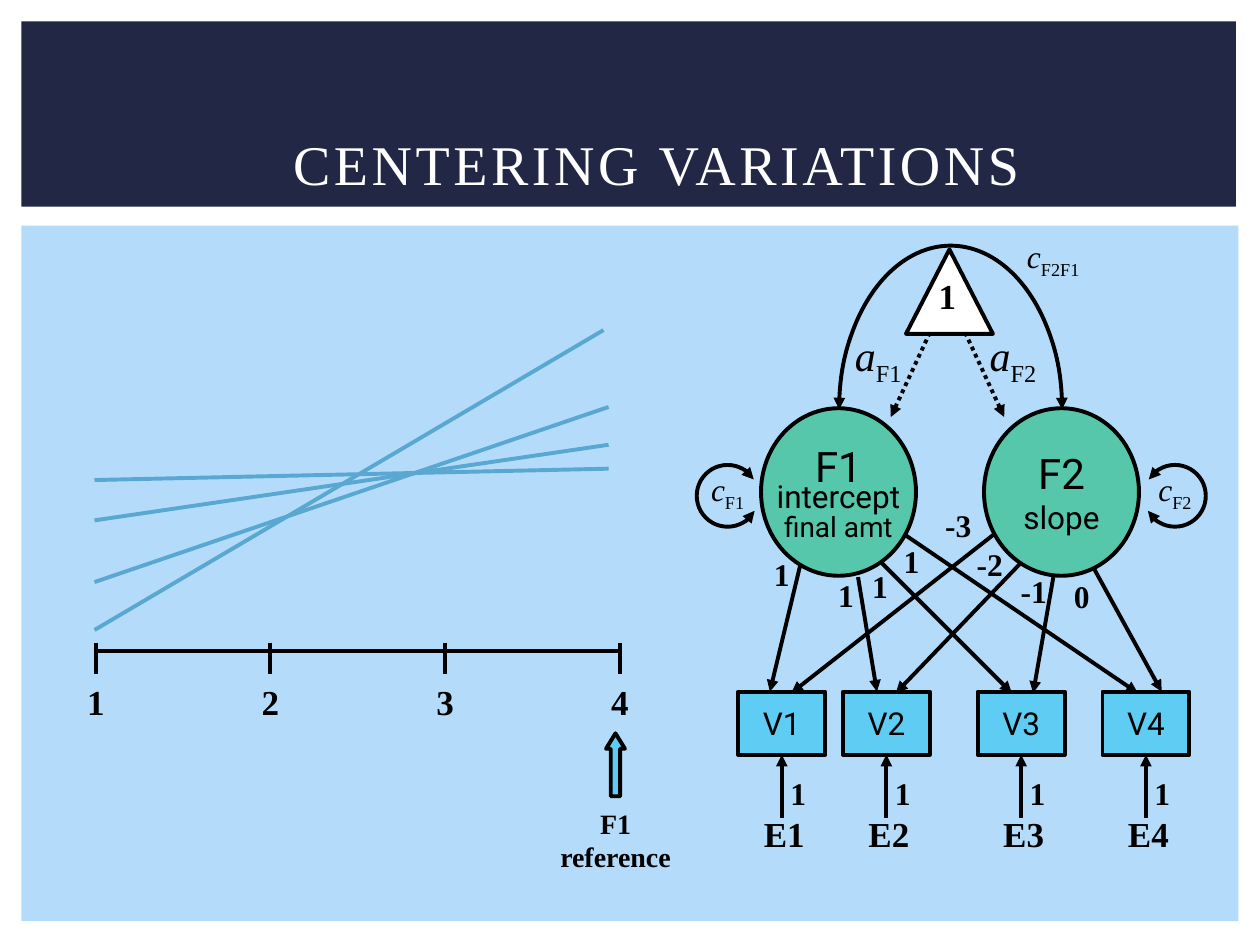
from lxml import etree
from pptx import Presentation
from pptx import util as u
from pptx.dml.color import RGBColor
from pptx.enum import dml, shapes, text
from pptx.oxml import ns

NAVY = RGBColor(0x21, 0x27, 0x45)
PALE = RGBColor(0xB4, 0xDC, 0xFA)
CYAN = RGBColor(0x5E, 0xCC, 0xF3)
GREEN = RGBColor(0x56, 0xC7, 0xAA)
STEEL = RGBColor(0x59, 0xA8, 0xD1)
BLACK = RGBColor(0, 0, 0)
WHITE = RGBColor(0xFF, 0xFF, 0xFF)
SERIF = "Times New Roman"
SANS = "Roboto"
STROKE = u.Pt(2.25)
Kind = shapes.MSO_SHAPE


def inches(*lengths):
    return [u.Inches(length) for length in lengths]


def add_run(paragraph, words, size, font=SERIF, color=BLACK, bold=False, italic=False):
    run = paragraph.add_run()
    run.text = words
    run.font.size = u.Pt(size)
    run.font.name = font
    run.font.color.rgb = color
    run.font.bold = bold
    run.font.italic = italic
    return run


def add_paragraph(frame, first, spacing=None):
    paragraph = frame.paragraphs[0] if first else frame.add_paragraph()
    paragraph.alignment = text.PP_ALIGN.CENTER
    if spacing:
        paragraph.line_spacing = spacing
    return paragraph


def add_label(slide, box, lines, size, subscript="", bold=True):
    frame = slide.shapes.add_textbox(*inches(*box)).text_frame
    frame.word_wrap = False
    frame.auto_size = text.MSO_AUTO_SIZE.SHAPE_TO_FIT_TEXT
    for index, line in enumerate(lines.split("\n")):
        paragraph = add_paragraph(frame, index == 0)
        add_run(paragraph, line, size, bold=bold, italic=bool(subscript))
    if subscript:
        run = add_run(paragraph, subscript, size)
        run.font._element.set("baseline", "-25000")


def add_figure(slide, kind, box, fill=None, outlined=True, lines=()):
    figure = slide.shapes.add_shape(kind, *inches(*box))
    figure.shadow.inherit = False
    if fill is None:
        figure.fill.background()
    else:
        figure.fill.solid()
        figure.fill.fore_color.rgb = fill
    if outlined:
        figure.line.color.rgb = BLACK
        figure.line.width = STROKE
    else:
        figure.line.fill.background()
    frame = figure.text_frame
    frame.word_wrap = False
    frame.vertical_anchor = text.MSO_ANCHOR.MIDDLE
    for index, (words, size, spacing) in enumerate(lines):
        add_run(add_paragraph(frame, index == 0, spacing), words, size, SANS)
    return figure


def add_arrowheads(figure, *ends):
    outline = figure.line._get_or_add_ln()
    for end in ends:
        etree.SubElement(outline, ns.qn(f"a:{end}"), type="triangle")


def add_line(slide, start, finish, color=BLACK, ends=(), dotted=False):
    line = slide.shapes.add_connector(shapes.MSO_CONNECTOR.STRAIGHT, *inches(*start, *finish))
    line.line.color.rgb = color
    line.line.width = STROKE
    if dotted:
        line.line.dash_style = dml.MSO_LINE.ROUND_DOT
    add_arrowheads(line, *ends)
    etree.SubElement(line._element.spPr, ns.qn("a:effectLst"))
    return line


def add_arc(slide, box, start, finish):
    arc = add_figure(slide, Kind.ARC, box)
    for index, degrees in enumerate((start, finish)):
        arc.adjustments[index] = degrees * 0.6
    add_arrowheads(arc, "headEnd", "tailEnd")


def add_title(slide):
    frame = slide.shapes.add_textbox(*inches(0.92, 0.92, 8.58, 0.75)).text_frame
    frame.word_wrap = True
    frame.vertical_anchor = text.MSO_ANCHOR.MIDDLE
    run = add_run(add_paragraph(frame, True), "CENTERING VARIATIONS", 32, color=WHITE)
    run.font._element.set("spc", "200")


def add_growth_plot(slide):
    for y_start, x_end, y_end in ((4.62, 4.83, 3.23), (4.13, 4.83, 3.53),
                                  (5, 4.79, 2.62), (3.81, 4.83, 3.72)):
        add_line(slide, (0.75, y_start), (x_end, y_end), STEEL)
    add_line(slide, (0.75, 5.17), (4.92, 5.17))
    for index in range(4):
        x = 0.76 + index * 4.16 / 3
        add_line(slide, (x, 5.1), (x, 5.35))
        add_label(slide, (x - 0.17, 5.35, 0.34, 0.43), str(index + 1), 20)
    pointer = add_figure(slide, Kind.UP_ARROW, (4.81, 5.82, 0.15, 0.5), CYAN)
    pointer.adjustments[1] = 0.82
    add_label(slide, (4.34, 6.35, 1.09, 0.64), "F1\nreference", 16)


def add_variable(slide, number, left):
    center = left + 0.345
    variable = add_figure(slide, Kind.RECTANGLE, (left, 5.49, 0.69, 0.5), CYAN,
                          lines=[(f"V{number}", 18, None)])
    error = add_line(slide, (center, 5.99), (center, 6.49), ends=["headEnd"])
    error.begin_connect(variable, 2)
    add_label(slide, (left + 0.31, 6.09, 0.33, 0.4), "1", 18)
    add_label(slide, (left + 0.1, 6.4, 0.53, 0.43), f"E{number}", 20)


def add_path_diagram(slide):
    for number, left in enumerate((5.86, 6.69, 7.76, 8.75), start=1):
        add_variable(slide, number, left)

    loadings = (
        ((6.35, 4.49), (6.11, 5.49)), ((6.81, 4.58), (6.96, 5.49)),
        ((6.94, 4.41), (8.03, 5.5)), ((7.19, 4.25), (9.03, 5.5)),
        ((7.89, 4.24), (6.28, 5.5)), ((8.1, 4.47), (7.11, 5.5)),
        ((8.36, 4.58), (8.2, 5.5)), ((8.67, 4.49), (9.22, 5.49)),
    )
    for factor_end, variable_end in loadings:
        add_line(slide, factor_end, variable_end, ends=["tailEnd"])
    weights = (
        ("1", 6.04, 4.36, 0.33), ("1", 6.55, 4.52, 0.33), ("1", 6.82, 4.45, 0.33),
        ("1", 7.07, 4.25, 0.33), ("-3", 7.4, 3.97, 0.41), ("-2", 7.65, 4.28, 0.41),
        ("-1", 8, 4.49, 0.41), ("0", 8.42, 4.53, 0.33),
    )
    for weight, left, top, width in weights:
        add_label(slide, (left, top, width, 0.4), weight, 18)

    factors = (
        (6.04, [("F1", 24, None), ("intercept", 18, 0.6), ("final amt", 16, 0.9)]),
        (7.81, [("F2", 24, None), ("slope", 18, None)]),
    )
    for left, lines in factors:
        add_figure(slide, Kind.OVAL, (left, 3.24, 1.23, 1.33), GREEN, lines=lines)

    add_figure(slide, Kind.ISOSCELES_TRIANGLE, (7.19, 1.98, 0.69, 0.67), WHITE)
    add_label(slide, (7.35, 2.13, 0.34, 0.43), "1", 20)
    for factor, left, start, finish in (("F1", 6.67, 7.38, 7.07), ("F2", 7.74, 7.66, 7.97)):
        add_line(slide, (start, 2.64), (finish, 3.31), ends=["tailEnd"], dotted=True)
        add_label(slide, (left, 2.57, 0.6, 0.5), "a", 24, factor, bold=False)

    add_arc(slide, (6.66, 1.95, 1.77, 2.6), 180, 0)
    add_label(slide, (8.03, 1.83, 0.66, 0.4), "c", 18, "F2F1", bold=False)
    for factor, left, start, finish in (("F1", 5.53, 29, 328), ("F2", 9.08, 212, 151)):
        add_arc(slide, (left, 3.69, 0.49, 0.49), start, finish)
        add_label(slide, (left, 3.68, 0.49, 0.4), "c", 18, factor, bold=False)


def main():
    deck = Presentation()
    deck.slide_width, deck.slide_height = inches(10, 7.5)
    slide = deck.slides.add_slide(deck.slide_layouts[6])
    add_figure(slide, Kind.RECTANGLE, (0.17, 1.79, 9.66, 5.52), PALE, outlined=False)
    add_figure(slide, Kind.RECTANGLE, (0.17, 0.17, 9.64, 1.47), NAVY, outlined=False)
    add_title(slide)
    add_path_diagram(slide)
    add_growth_plot(slide)
    deck.save("out.pptx")


if __name__ == "__main__":
    main()
